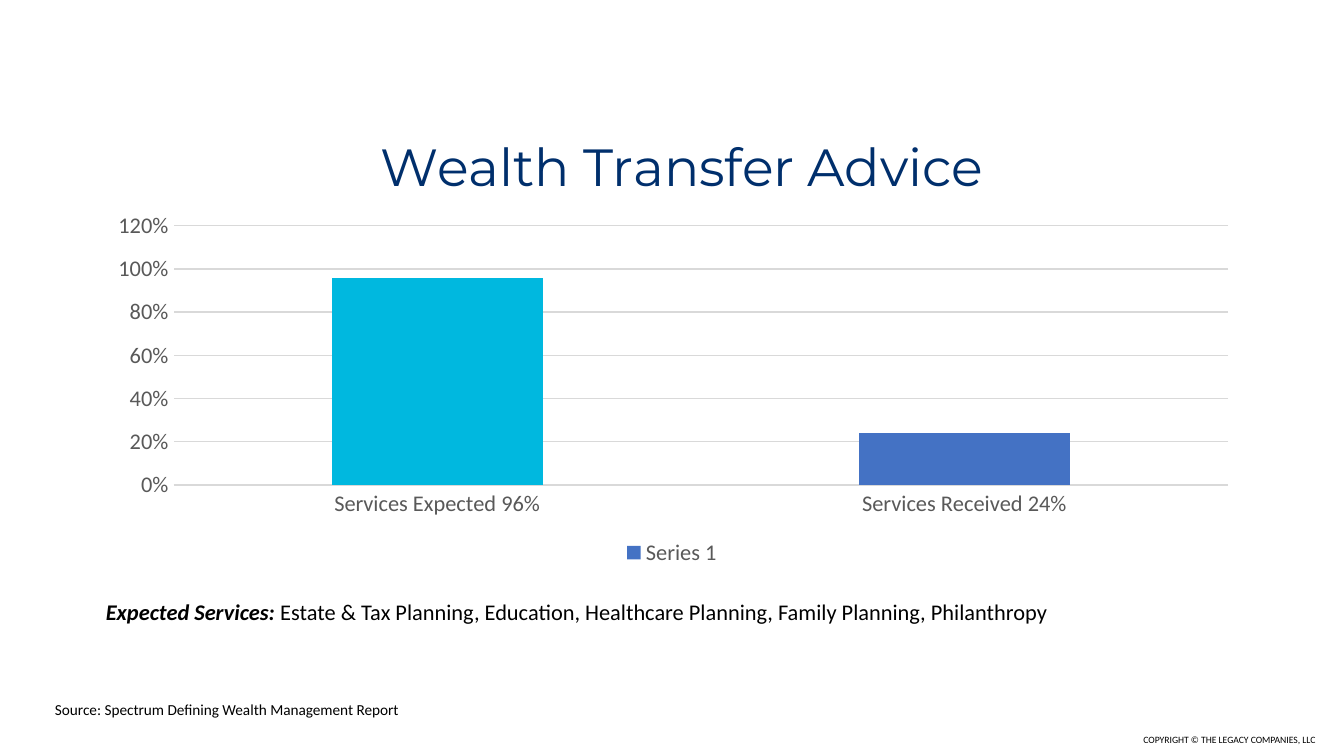
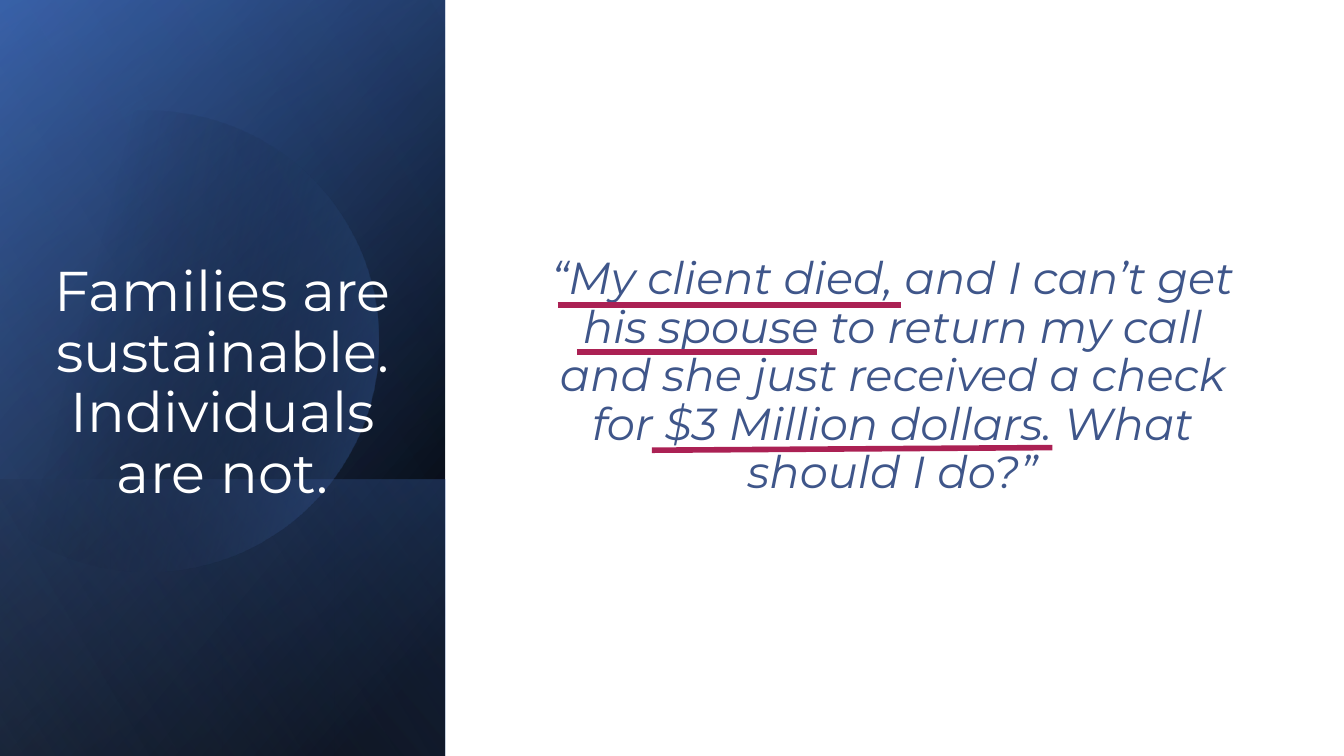
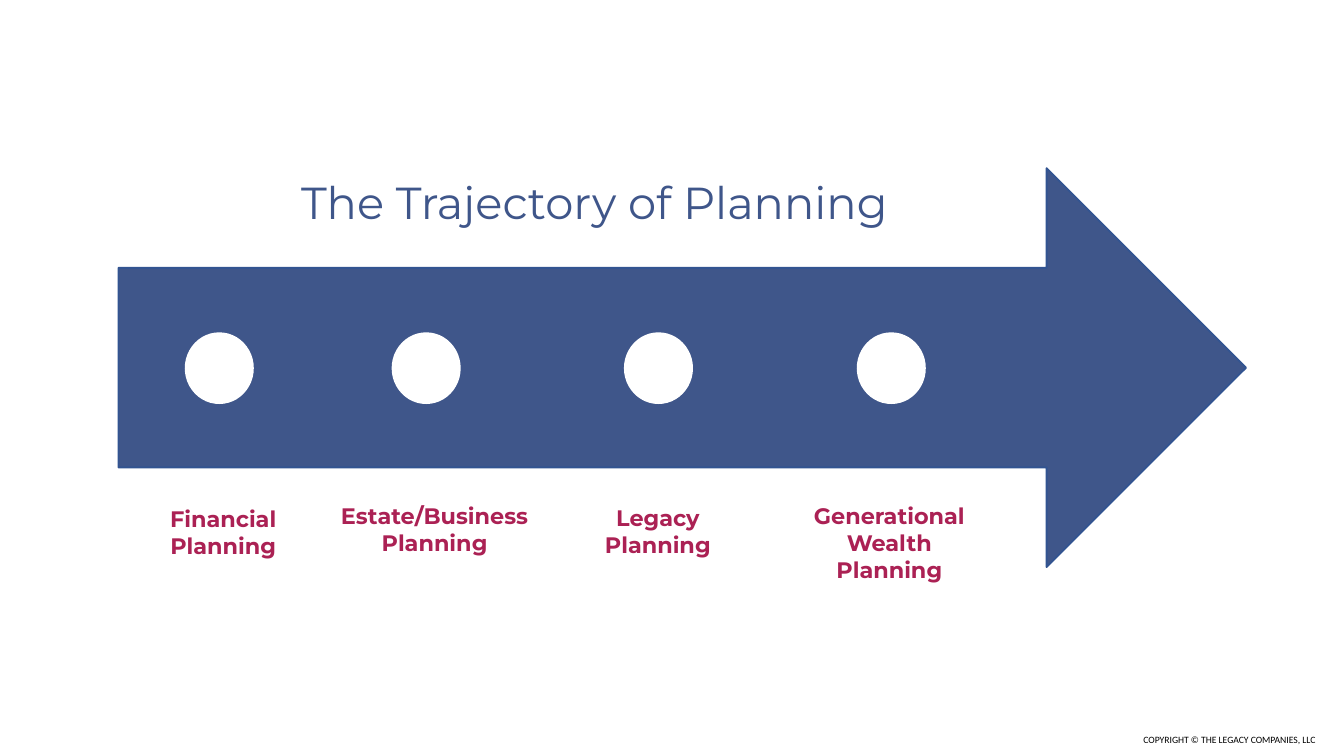
from math import cos, radians, sin

from pptx import Presentation
from pptx.chart.data import CategoryChartData
from pptx.dml.color import RGBColor
from pptx.enum.chart import XL_CHART_TYPE, XL_LEGEND_POSITION, XL_TICK_MARK
from pptx.enum.shapes import MSO_CONNECTOR, MSO_SHAPE
from pptx.enum.text import MSO_ANCHOR, MSO_AUTO_SIZE, PP_ALIGN
from pptx.oxml import parse_xml
from pptx.oxml.ns import nsdecls, qn
from pptx.util import Cm, Pt

COLOURS = {
    "white": "FFFFFF", "black": "000000", "navy": "002F6C", "blue": "3F568A",
    "edge": "325491", "crimson": "AB2154", "cyan": "00B8DF", "series": "4472C4",
    "deep": "2F5597", "pale": "8FAADC", "axis": "595959", "grid": "D9D9D9",
}
BODY, DISPLAY = "Calibri", "Montserrat"
SLIDE_W, SLIDE_H = 25.4, 14.29
PANEL_W = 8.41


def colour(name):
    return RGBColor.from_string(COLOURS[name])


def style_font(font, face, size, ink, bold=None, italic=None):
    font.name, font.size = face, Pt(size)
    font.color.rgb = colour(ink)
    font.bold, font.italic = bold, italic


def add_label(slide, box, lines, face, size, ink, align=None, bold=None):
    """Unwrapped text; each line is a list of (text, emphasised) runs."""
    label = slide.shapes.add_textbox(*map(Cm, box))
    frame = label.text_frame
    frame.word_wrap = False
    frame.auto_size = MSO_AUTO_SIZE.SHAPE_TO_FIT_TEXT
    for number, line in enumerate(lines):
        paragraph = frame.add_paragraph() if number else frame.paragraphs[0]
        paragraph.alignment = align
        for text, emphasised in line:
            run = paragraph.add_run()
            run.text = text
            style_font(run.font, face, size, ink, bold or emphasised, emphasised)


def add_statement(slide, box, text, size, ink, anchor, italic=None):
    """Wrapped, centred display text."""
    frame = slide.shapes.add_textbox(*map(Cm, box)).text_frame
    frame.word_wrap = True
    frame.vertical_anchor = anchor
    paragraph = frame.paragraphs[0]
    paragraph.alignment = PP_ALIGN.CENTER
    paragraph.line_spacing, paragraph.space_after = 0.9, Pt(6)
    run = paragraph.add_run()
    run.text = text
    style_font(run.font, DISPLAY, size, ink, italic=italic)


def add_footer(slide):
    add_label(slide, (21.36, 13.74, 3.86, 0.48),
              [[("COPYRIGHT © THE LEGACY COMPANIES, LLC", None)]], BODY, 5.2, "black")


def add_solid(slide, preset, box, fill, line=None):
    solid = slide.shapes.add_shape(preset, *map(Cm, box))
    solid.shadow.inherit = False
    solid.fill.solid()
    solid.fill.fore_color.rgb = colour(fill)
    if line:
        solid.line.color.rgb = colour(line)
        solid.line.width = Pt(1)
    else:
        solid.line.fill.background()


def set_gradient(shape, stops, angle):
    """Stops are (position %, colour, opacity %)."""
    shape.shadow.inherit = False
    shape.line.fill.background()
    shape.fill.background()
    stop_xml = "".join(
        f'<a:gs pos="{position * 1000}"><a:srgbClr val="{COLOURS[name]}">'
        f'<a:alpha val="{opacity * 1000}"/></a:srgbClr></a:gs>'
        for position, name, opacity in stops)
    gradient = parse_xml(
        f'<a:gradFill {nsdecls("a")} rotWithShape="1"><a:gsLst>{stop_xml}</a:gsLst>'
        f'<a:lin ang="{round(angle * 60000)}" scaled="0"/></a:gradFill>')
    properties = shape._element.spPr
    properties.replace(properties.find(qn("a:noFill")), gradient)


def add_panel_layer(slide, top, stops, angle):
    """Left panel layer from top to the slide's end, turned a quarter and mirrored."""
    height = SLIDE_H - top
    left = (PANEL_W - height) / 2
    turned_top = top + (height - PANEL_W) / 2
    layer = slide.shapes.add_shape(
        MSO_SHAPE.RECTANGLE, Cm(left), Cm(turned_top), Cm(height), Cm(PANEL_W))
    layer.rotation = 90
    layer._element.spPr.xfrm.set("flipH", "1")
    set_gradient(layer, stops, angle)


def add_cut_disc(slide, centre_x, centre_y, radius, stops, angle):
    """Disc with its left segment cut off by a vertical chord."""
    points = [(Cm(centre_x + radius * cos(radians(turn))),
               Cm(centre_y + radius * sin(radians(turn))))
              for turn in range(-135, 136, 3)]
    builder = slide.shapes.build_freeform(*points[0])
    builder.add_line_segments(points[1:], close=True)
    set_gradient(builder.convert_to_shape(), stops, angle)


def add_underline(slide, start_x, start_y, end_x, end_y):
    underline = slide.shapes.add_connector(
        MSO_CONNECTOR.STRAIGHT, Cm(start_x), Cm(start_y), Cm(end_x), Cm(end_y))
    underline.line.color.rgb = colour("crimson")
    underline.line.width = Pt(3)
    underline._element.spPr.append(parse_xml(f'<a:effectLst {nsdecls("a")}/>'))


def set_layout(parent, index, target="", **fractions):
    """Fixed place of a chart part, in fractions of the chart."""
    for old in parent.findall(qn("c:layout")):
        parent.remove(old)
    modes = '<c:xMode val="edge"/><c:yMode val="edge"/>'
    values = "".join(f'<c:{key} val="{value}"/>' for key, value in fractions.items())
    parent.insert(index, parse_xml(
        f'<c:layout {nsdecls("c")}><c:manualLayout>{target}{modes}{values}'
        "</c:manualLayout></c:layout>"))


def add_advice_chart(slide):
    data = CategoryChartData(number_format="0%")
    data.categories = ["Services Expected 96%", "Services Received 24%"]
    data.add_series("Series 1", (0.96, 0.24))
    chart = slide.shapes.add_chart(
        XL_CHART_TYPE.COLUMN_STACKED, Cm(1.75), Cm(1.73), Cm(21.9), Cm(9.07), data).chart
    style_font(chart.font, BODY, 10, "black")

    # Title
    chart.has_title = True
    title_run = chart.chart_title.text_frame.paragraphs[0].add_run()
    title_run.text = "Wealth Transfer Advice"
    style_font(title_run.font, DISPLAY, 28, "navy", bold=False)

    # Columns
    plot = chart.plots[0]
    plot.vary_by_categories = False
    plot.gap_width, plot.overlap = 150, 100
    services = plot.series[0]
    expected = services.points[0]
    for part, name in ((services, "series"), (expected, "cyan")):
        part.format.fill.solid()
        part.format.fill.fore_color.rgb = colour(name)

    # Axes and legend
    percent, category = chart.value_axis, chart.category_axis
    for axis in (percent, category):
        axis.major_tick_mark = axis.minor_tick_mark = XL_TICK_MARK.NONE
        style_font(axis.tick_labels.font, BODY, 12, "axis")
    percent.minimum_scale, percent.maximum_scale, percent.major_unit = 0, 1.2, 0.2
    percent.tick_labels.number_format = "0%"
    percent.tick_labels.number_format_is_linked = False
    percent.format.line.fill.background()
    for line in (percent.major_gridlines.format.line, category.format.line):
        line.color.rgb = colour("grid")
        line.width = Pt(0.75)
    chart.has_legend = True
    chart.legend.position = XL_LEGEND_POSITION.BOTTOM
    chart.legend.include_in_layout = False
    style_font(chart.legend.font, BODY, 12, "axis")

    # Places inside the chart
    root = chart._chartSpace
    set_layout(root.xpath("c:chart/c:title")[0], 1, x=0.24, y=0.06)
    set_layout(root.xpath("c:chart/c:plotArea")[0], 0,
               '<c:layoutTarget val="inner"/>', x=0.07, y=0.28, w=0.91, h=0.54)


def build_advice(slide):
    add_footer(slide)
    add_advice_chart(slide)
    add_label(slide, (0.79, 13.11, 7.21, 0.61),
              [[("Source: Spectrum Defining Wealth Management Report", None)]],
              BODY, 8.2, "black")
    services = "Estate & Tax Planning, Education, Healthcare Planning, Family Planning, Philanthropy"
    add_label(slide, (1.75, 11.18, 18.49, 0.76),
              [[("Expected Services: ", True), (services, False)]], BODY, 12, "black")


def build_families(slide):
    add_solid(slide, MSO_SHAPE.RECTANGLE, (0, 0, SLIDE_W, SLIDE_H), "white")

    # Layered panel
    add_panel_layer(slide, 0, [(8, "black", 100), (100, "deep", 100)], 50)
    add_panel_layer(slide, 0, [(0, "black", 0), (99, "series", 46)], 30)
    add_panel_layer(slide, 9.07, [(2, "series", 29), (100, "black", 30)], 130)
    add_cut_disc(slide, 2.79, 6.45, 4.36, [(29, "black", 0), (100, "series", 43)], 13.9)
    add_panel_layer(slide, 0, [(0, "black", 0), (99, "pale", 11)], 120)

    # Statement and quote
    add_statement(slide, (0.69, 2.62, 7.04, 7.06),
                  "Families are sustainable. Individuals are not.",
                  30, "white", MSO_ANCHOR.BOTTOM)
    add_statement(slide, (10.03, 1.35, 13.67, 11.56),
                  "“My client died, and I can’t get his spouse to return my call and she "
                  "just received a check for $3 Million dollars. What should I do?”",
                  24, "blue", MSO_ANCHOR.MIDDLE, italic=True)
    for ends in ((10.54, 5.77, 17.02, 5.77), (10.9, 6.65, 15.44, 6.65),
                 (12.32, 8.51, 19.89, 8.46)):
        add_underline(slide, *ends)


def build_trajectory(slide):
    add_footer(slide)
    add_solid(slide, MSO_SHAPE.RIGHT_ARROW, (2.24, 3.18, 21.31, 7.54), "blue", "edge")
    add_label(slide, (5.44, 3.18, 11.76, 1.27),
              [[("The Trajectory of Planning", None)]], DISPLAY, 24, "blue")

    # Stages: stop's left, label's left, top and width, label lines
    stages = (
        (3.51, 2.95, 9.42, 2.54, ("Financial", "Planning")),
        (7.42, 6.17, 9.37, 4.09, ("Estate/Business", "Planning")),
        (11.81, 11.18, 9.4, 2.51, ("Legacy", "Planning")),
        (16.21, 15.11, 9.37, 3.4, ("Generational", "Wealth", "Planning")),
    )
    for stop_left, left, top, width, words in stages:
        add_solid(slide, MSO_SHAPE.OVAL, (stop_left, 6.3, 1.27, 1.32), "white", "white")
        add_label(slide, (left, top, width, 0.25 + 0.51 * len(words)),
                  [[(word, None)] for word in words],
                  DISPLAY, 12, "crimson", PP_ALIGN.CENTER, bold=True)


def main():
    deck = Presentation()
    deck.slide_width, deck.slide_height = Cm(SLIDE_W), Cm(SLIDE_H)
    blank = deck.slide_layouts[6]
    for build in (build_advice, build_families, build_trajectory):
        build(deck.slides.add_slide(blank))
    deck.save("out.pptx")


if __name__ == "__main__":
    main()
